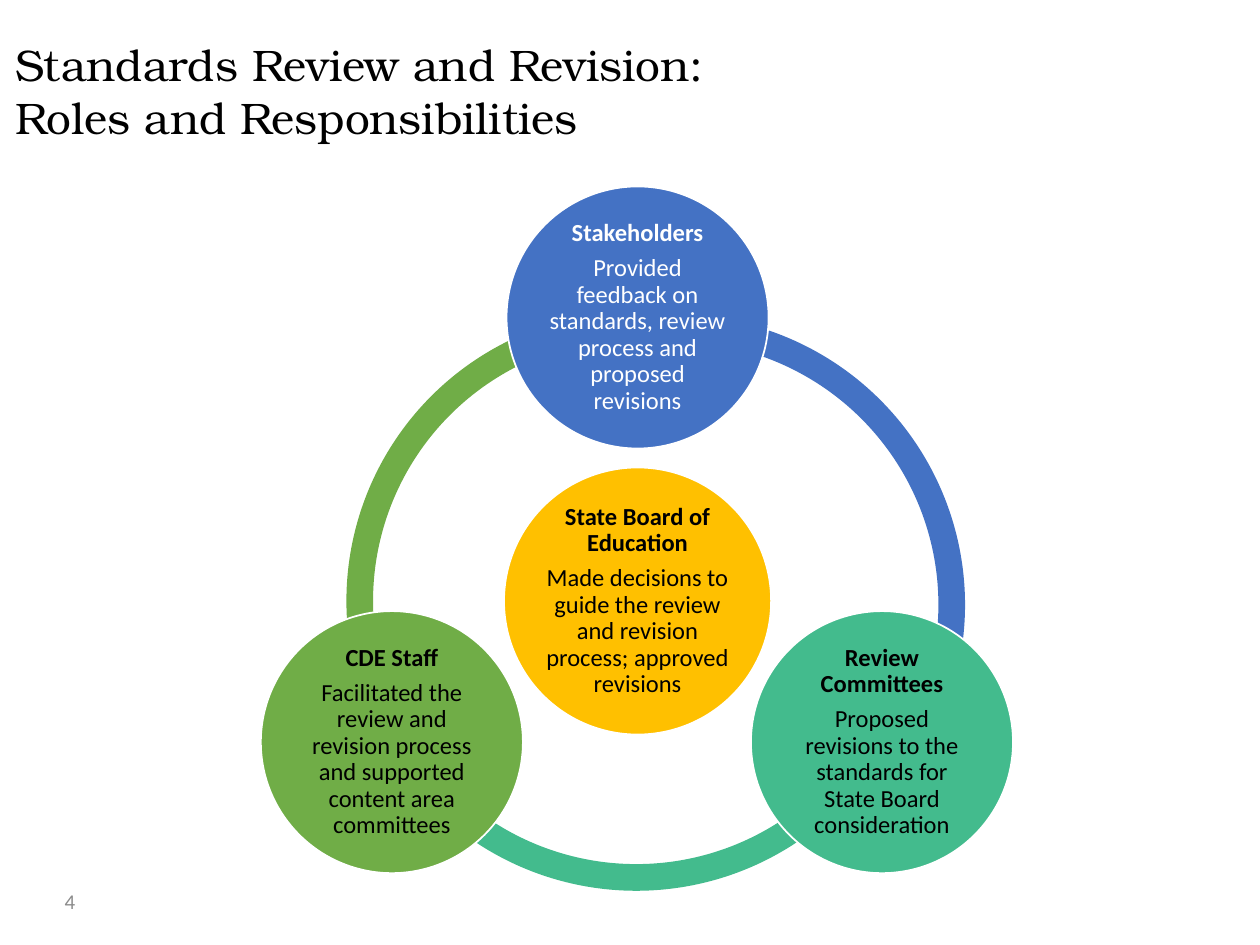
from pptx import Presentation
from pptx.dml.color import RGBColor
from pptx.enum import shapes, text
from pptx.util import Inches, Pt

COLORS = {
    "black": "000000",
    "white": "FFFFFF",
    "gray": "8C8C8C",
    "green": "70AD47",
    "teal": "43BB8D",
    "blue": "4472C4",
    "gold": "FFC000",
}

RING_SIZE = 4.6
RING_THICKNESS = 0.046

# left, top, start angle, end angle, colour
ARCS = [
    (2.75, 2.47, 150, 270, "green"),
    (2.75, 2.47, 30, 150, "teal"),
    (3.06, 2.5, 270, 30, "blue"),
]

# left, top, diameter, fill, text colour, role, responsibility
ROLES = [
    (4, 3.71, 2.12, "gold", "black", "State Board of Education",
     "Made decisions to guide the review and revision process; approved revisions"),
    (4.02, 1.48, 2.08, "blue", "white", "Stakeholders",
     "Provided feedback on standards, review process and proposed revisions"),
    (5.96, 4.85, 2.08, "teal", "black", "Review Committees",
     "Proposed revisions to the standards for State Board consideration"),
    (2.07, 4.85, 2.08, "green", "black", "CDE Staff",
     "Facilitated the review and revision process and supported content area committees"),
]


def rgb(name):
    return RGBColor.from_string(COLORS[name])


def set_font(paragraph, name, size, color, bold=False):
    font = paragraph.font
    font.name = name
    font.size = Pt(size)
    font.bold = bold
    font.color.rgb = rgb(color)


def set_margins(frame, margin):
    frame.margin_left = frame.margin_right = Inches(margin)
    frame.margin_top = frame.margin_bottom = Inches(margin)


def add_title(slide, title):
    box = slide.shapes.add_textbox(Inches(0.12), Inches(0.3), Inches(9.72), Inches(0.78))
    frame = box.text_frame
    frame.word_wrap = True
    set_margins(frame, 0)
    paragraph = frame.paragraphs[0]
    paragraph.text = title
    set_font(paragraph, "TeX Gyre Bonum", 25.2, "black")


def add_slide_number(slide, number):
    box = slide.shapes.add_textbox(Inches(0.3), Inches(6.95), Inches(0.51), Inches(0.4))
    frame = box.text_frame
    frame.word_wrap = True
    frame.vertical_anchor = text.MSO_ANCHOR.MIDDLE
    paragraph = frame.paragraphs[0]
    paragraph.text = number
    paragraph.alignment = text.PP_ALIGN.CENTER
    set_font(paragraph, "Calibri", 12, "gray")


def add_filled_shape(slide, kind, left, top, size, fill):
    shape = slide.shapes.add_shape(
        kind, Inches(left), Inches(top), Inches(size), Inches(size))
    shape.shadow.inherit = False
    shape.fill.solid()
    shape.fill.fore_color.rgb = rgb(fill)
    return shape


def add_arc(slide, left, top, start, end, color):
    """Add a ring segment running clockwise between two angles in degrees."""
    arc = add_filled_shape(
        slide, shapes.MSO_SHAPE.BLOCK_ARC, left, top, RING_SIZE, color)
    arc.line.fill.background()
    # Angles are stored in 60000ths of a degree, adjustments in 100000ths.
    arc.adjustments[0] = start * 0.6
    arc.adjustments[1] = end * 0.6
    arc.adjustments[2] = RING_THICKNESS


def add_role(slide, left, top, diameter, fill, text_color, role, responsibility):
    circle = add_filled_shape(
        slide, shapes.MSO_SHAPE.OVAL, left, top, diameter, fill)
    circle.line.color.rgb = rgb("white")
    circle.line.width = Pt(1)
    frame = circle.text_frame
    frame.word_wrap = True
    frame.vertical_anchor = text.MSO_ANCHOR.MIDDLE
    set_margins(frame, 0.02)
    heading, body = frame.paragraphs[0], frame.add_paragraph()
    for paragraph, words in ((heading, role), (body, responsibility)):
        paragraph.text = words
        paragraph.alignment = text.PP_ALIGN.CENTER
        paragraph.line_spacing = 0.9
        paragraph.space_after = Pt(5)
        set_font(paragraph, "Calibri", 14, text_color, bold=paragraph is heading)


def main():
    presentation = Presentation()
    presentation.slide_width = Inches(10)
    presentation.slide_height = Inches(7.5)
    slide = presentation.slides.add_slide(presentation.slide_layouts[6])
    add_title(slide, "Standards Review and Revision:\vRoles and Responsibilities")
    add_slide_number(slide, "4")
    for arc in ARCS:
        add_arc(slide, *arc)
    for role in ROLES:
        add_role(slide, *role)
    presentation.save("out.pptx")


if __name__ == "__main__":
    main()
